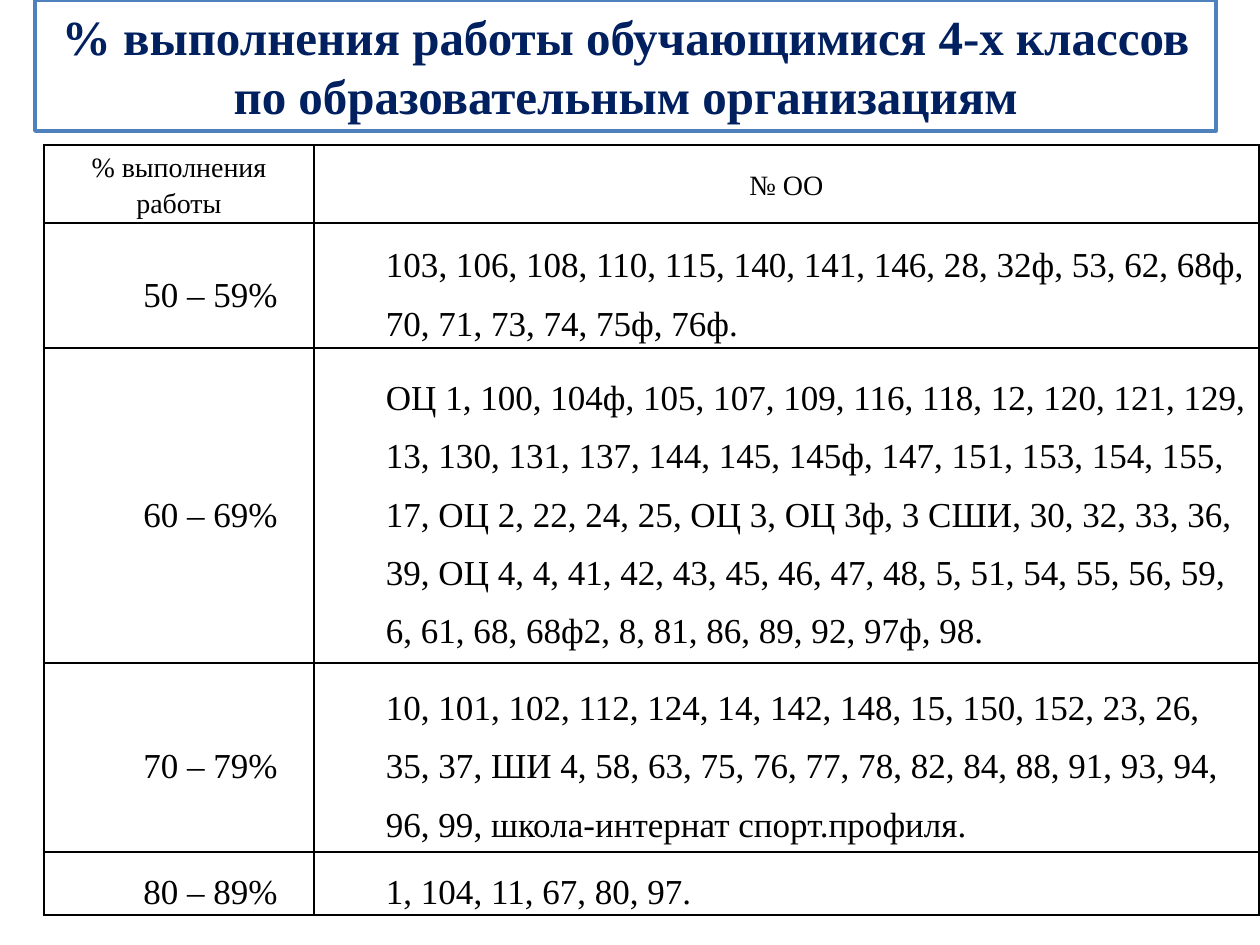
import pptx
import pptx.dml.color
import pptx.enum.shapes
import pptx.enum.text
import pptx.oxml
import pptx.oxml.ns
import pptx.util

PX = 914400 // 126
FONT = "Times New Roman"
COLORS = {"paper": "FFFFFF", "frame": "4F81BD", "title": "002060", "ink": "000000"}
CENTER = pptx.enum.text.PP_ALIGN.CENTER
LEFT = pptx.enum.text.PP_ALIGN.LEFT
MIDDLE = pptx.enum.text.MSO_ANCHOR.MIDDLE

COLUMN_WIDTHS = [270, 945]
ROW_HEIGHTS = [78, 125, 315, 189, 63]
ROWS = [
    ("% выполнения работы", "№ ОО"),
    ("50 – 59%",
     "103, 106, 108, 110, 115, 140, 141, 146, 28, 32ф, 53, 62, 68ф, "
     "70, 71, 73, 74, 75ф, 76ф."),
    ("60 – 69%",
     "ОЦ 1, 100, 104ф, 105, 107, 109, 116, 118, 12, 120, 121, 129, "
     "13, 130, 131, 137, 144, 145, 145ф, 147, 151, 153, 154, 155, "
     "17, ОЦ 2, 22, 24, 25, ОЦ 3, ОЦ 3ф, 3 СШИ, 30, 32, 33, 36, "
     "39, ОЦ 4, 4, 41, 42, 43, 45, 46, 47, 48, 5, 51, 54, 55, 56, 59, "
     "6, 61, 68, 68ф2, 8, 81, 86, 89, 92, 97ф, 98."),
    ("70 – 79%",
     "10, 101, 102, 112, 124, 14, 142, 148, 15, 150, 152, 23, 26, "
     "35, 37, ШИ 4, 58, 63, 75, 76, 77, 78, 82, 84, 88, 91, 93, 94, "
     "96, 99, школа-интернат спорт.профиля."),
    ("80 – 89%", "1, 104, 11, 67, 80, 97."),
]


def style_text(para, size, color, bold=False):
    for span in para.runs:
        span.font.name = FONT
        span.font.size = pptx.util.Pt(size)
        span.font.bold = bold
        span.font.color.rgb = pptx.dml.color.RGBColor.from_string(COLORS[color])


def add_borders(cell):
    """Draw a 1 pt line on all four sides; must run before the cell gets its fill."""
    properties = cell._tc.get_or_add_tcPr()
    for side in ("lnL", "lnR", "lnT", "lnB"):
        properties.append(pptx.oxml.parse_xml(
            f'<a:{side} {pptx.oxml.ns.nsdecls("a")} w="12700"><a:solidFill>'
            f'<a:srgbClr val="{COLORS["ink"]}"/></a:solidFill></a:{side}>'))


deck = pptx.Presentation()
deck.slide_width = pptx.util.Inches(10)
deck.slide_height = pptx.util.Inches(7.5)
page = deck.slides.add_slide(deck.slide_layouts[6])

# Title
title = page.shapes.add_shape(
    pptx.enum.shapes.MSO_SHAPE.RECTANGLE, 35 * PX, 0, 1181 * PX, 131 * PX)
title.shadow.inherit = False
title.fill.solid()
title.fill.fore_color.rgb = pptx.dml.color.RGBColor.from_string(COLORS["paper"])
title.line.color.rgb = pptx.dml.color.RGBColor.from_string(COLORS["frame"])
title.line.width = pptx.util.Pt(2)
title.text_frame.word_wrap = True
title.text_frame.vertical_anchor = MIDDLE
title.text_frame.text = ("% выполнения работы обучающимися 4-х классов "
                         "по образовательным организациям")
title.text_frame.paragraphs[0].alignment = CENTER
style_text(title.text_frame.paragraphs[0], 28, "title", bold=True)

# Results table
frame = page.shapes.add_table(
    len(ROWS), len(COLUMN_WIDTHS), 44 * PX, 145 * PX,
    sum(COLUMN_WIDTHS) * PX, sum(ROW_HEIGHTS) * PX)
table = frame.table
for column, width in zip(table.columns, COLUMN_WIDTHS):
    column.width = width * PX
for row, height in zip(table.rows, ROW_HEIGHTS):
    row.height = height * PX

for row_index, texts in enumerate(ROWS):
    is_header = row_index == 0
    for column_index, text in enumerate(texts):
        cell = table.cell(row_index, column_index)
        add_borders(cell)
        cell.fill.background()
        cell.vertical_anchor = MIDDLE
        cell.margin_left = cell.margin_right = 9 * PX
        cell.margin_top = cell.margin_bottom = 0
        cell.text_frame.text = text
        para = cell.text_frame.paragraphs[0]
        para.alignment = CENTER if is_header or column_index == 0 else LEFT
        para.line_spacing = 1.15 if is_header else 1.5
        if is_header:
            para.space_after = pptx.util.Pt(10)
        else:
            para._p.get_or_add_pPr().set("marL", str(63 * PX))
        style_text(para, 16 if is_header else 20, "ink")

deck.save("out.pptx")
